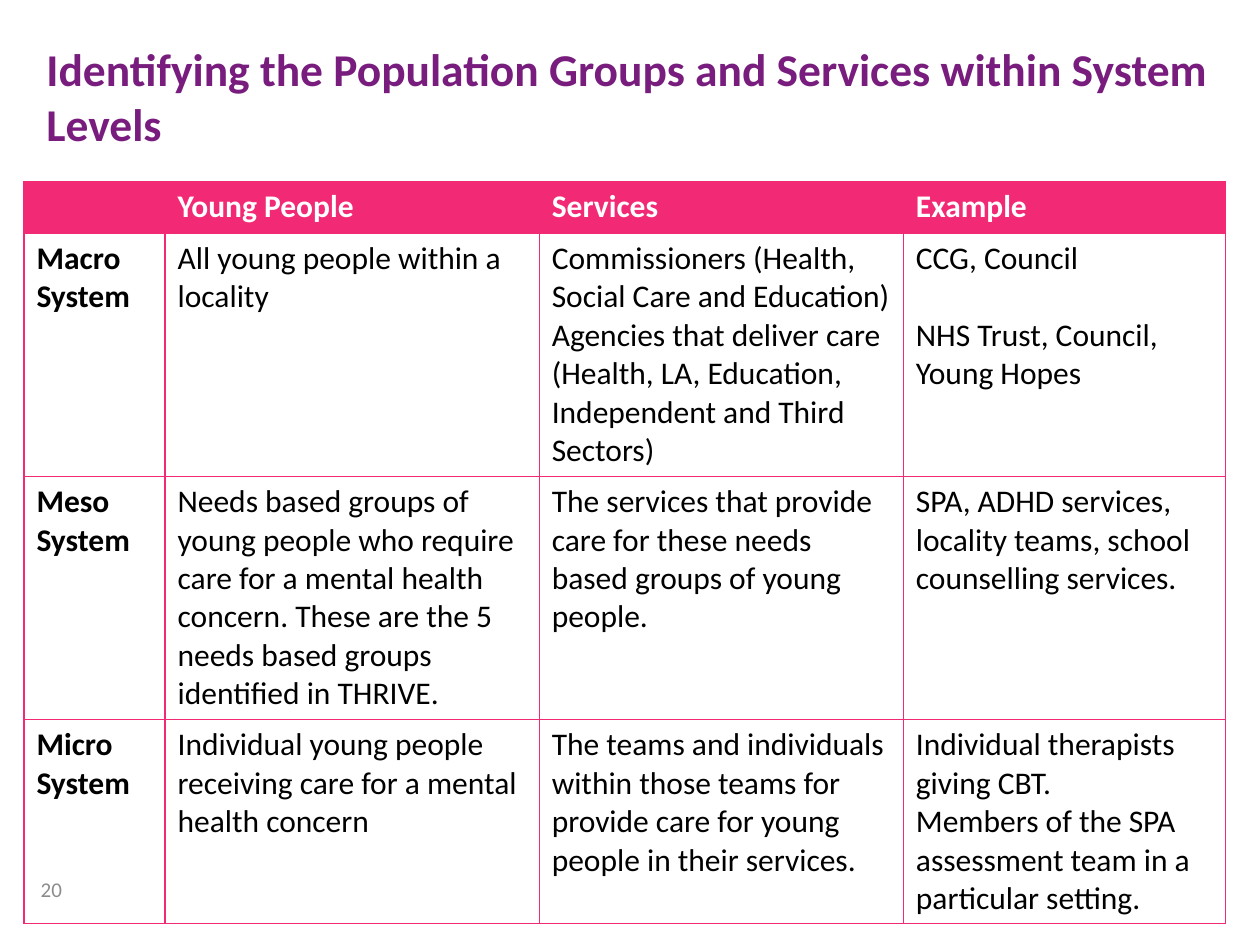
import pptx
import pptx.util
import pptx.dml.color
import pptx.enum.text
import pptx.oxml
import pptx.oxml.ns

COLORS = {"title": "781D7D", "accent": "F22975", "head": "FFFFFF",
          "body": "000000", "number": "8C8C8C"}
FONT = "Calibri"
COLS = (1.12, 2.97, 2.89, 2.56)
ROWS = (0.41, 1.93, 1.93, 1.62)
CELLS = (
    ("", "Young People", "Services", "Example"),
    ("Macro System", "All young people within a locality",
     "Commissioners (Health, Social Care and Education)\n"
     "Agencies that deliver care (Health, LA, Education, Independent and Third Sectors)",
     "CCG, Council\nNHS Trust, Council, Young Hopes"),
    ("Meso System",
     "Needs based groups of young people who require care for a mental health concern. "
     "These are the 5 needs based groups identified in THRIVE.",
     "The services that provide care for these needs based groups of young people.",
     "SPA, ADHD services, locality teams, school counselling services."),
    ("Micro System",
     "Individual young people receiving care for a mental health concern",
     "The teams and individuals within those teams for provide care for young people "
     "in their services.",
     "Individual therapists giving CBT.\n"
     "Members of the SPA assessment team in a particular setting."),
)
GAP_BEFORE = {"NHS Trust, Council, Young Hopes": 22}


def rgb(name):
    """Return the named colour."""
    return pptx.dml.color.RGBColor.from_string(COLORS[name])


def write(tf, text, size=18, color="body", bold=False, align=None):
    """Fill a text frame with one formatted paragraph per line."""
    for i, line in enumerate(text.split("\n")):
        p = tf.paragraphs[0] if i == 0 else tf.add_paragraph()
        p.alignment = align
        if line in GAP_BEFORE:
            p.space_before = pptx.util.Pt(GAP_BEFORE[line])
        p.font.size = pptx.util.Pt(size)
        if line:
            r = p.add_run()
            r.text = line
            r.font.name = FONT
            r.font.size = pptx.util.Pt(size)
            r.font.bold = bold
            r.font.color.rgb = rgb(color)


def add_text(s, box, text, anchor=pptx.enum.text.MSO_ANCHOR.TOP, **fmt):
    """Add a wrapping text box."""
    sp = s.shapes.add_textbox(*map(pptx.util.Inches, box))
    tf = sp.text_frame
    tf.word_wrap = True
    tf.vertical_anchor = anchor
    write(tf, text, **fmt)


def set_borders(cell):
    """Draw a thin accent line on every side of a cell."""
    tcPr = cell._tc.get_or_add_tcPr()
    for i, side in enumerate(("lnL", "lnR", "lnT", "lnB")):
        tcPr.insert(i, pptx.oxml.parse_xml(
            f'<a:{side} {pptx.oxml.ns.nsdecls("a")} w="{pptx.util.Pt(0.75)}">'
            f'<a:solidFill><a:srgbClr val="{COLORS["accent"]}"/></a:solidFill></a:{side}>'))


def add_levels_table(s, left, top):
    """Add the table of system levels."""
    size = map(pptx.util.Inches, (left, top, sum(COLS), sum(ROWS)))
    table = s.shapes.add_table(len(ROWS), len(COLS), *size).table
    table.horz_banding = False
    for col, width in zip(table.columns, COLS):
        col.width = pptx.util.Inches(width)
    for i, (row, height) in enumerate(zip(table.rows, ROWS)):
        row.height = pptx.util.Inches(height)
        for j, cell in enumerate(row.cells):
            if i == 0:
                cell.fill.solid()
                cell.fill.fore_color.rgb = rgb("accent")
            else:
                cell.fill.background()
            set_borders(cell)
            write(cell.text_frame, CELLS[i][j], bold=i == 0 or j == 0,
                  color="head" if i == 0 else "body")


def main():
    """Build and save the slide."""
    prs = pptx.Presentation()
    prs.slide_width = pptx.util.Inches(10)
    prs.slide_height = pptx.util.Inches(7.5)
    s = prs.slides.add_slide(prs.slide_layouts[6])
    add_text(s, (0.12, 6.86, 0.47, 0.4), "20", size=12, color="number",
             anchor=pptx.enum.text.MSO_ANCHOR.MIDDLE,
             align=pptx.enum.text.PP_ALIGN.RIGHT)
    add_text(s, (0.27, 0.28, 9.45, 0.63),
             "Identifying the Population Groups and Services within System Levels",
             size=26, color="title", bold=True)
    add_levels_table(s, 0.19, 1.44)
    prs.save("out.pptx")


if __name__ == "__main__":
    main()
